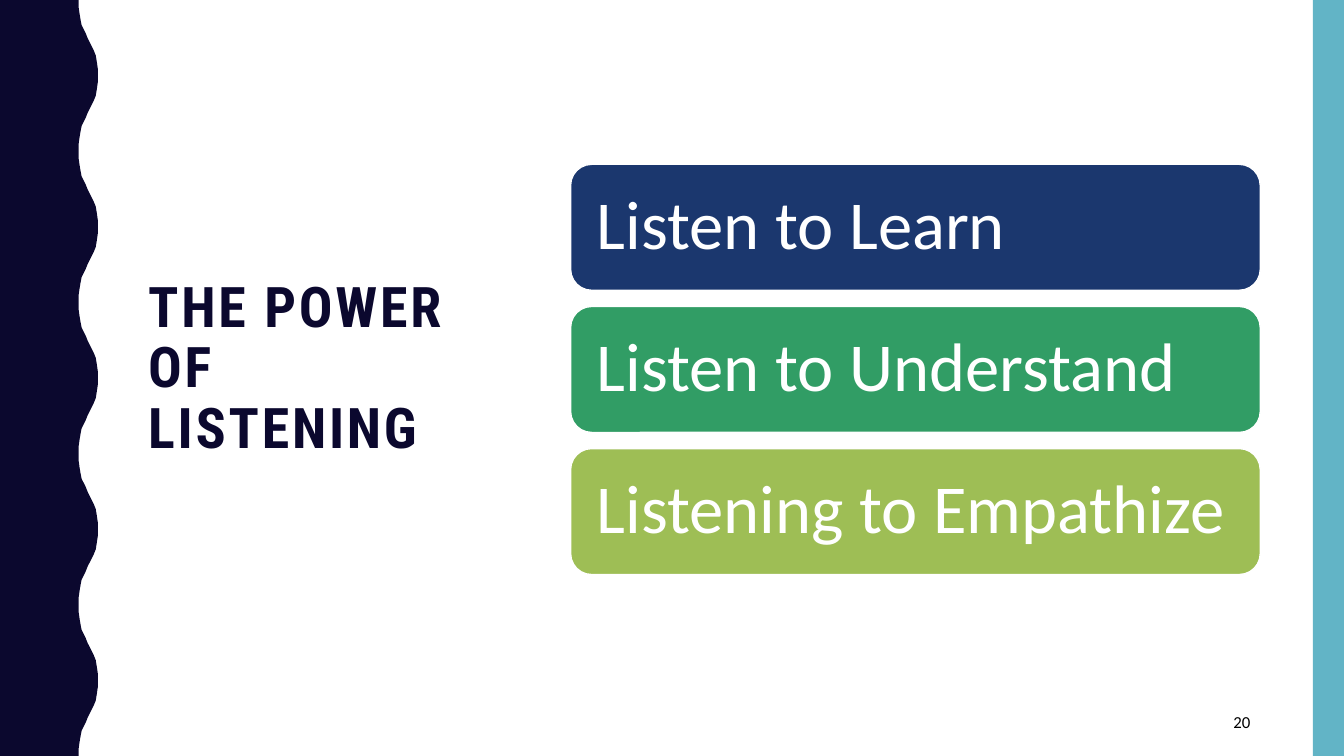
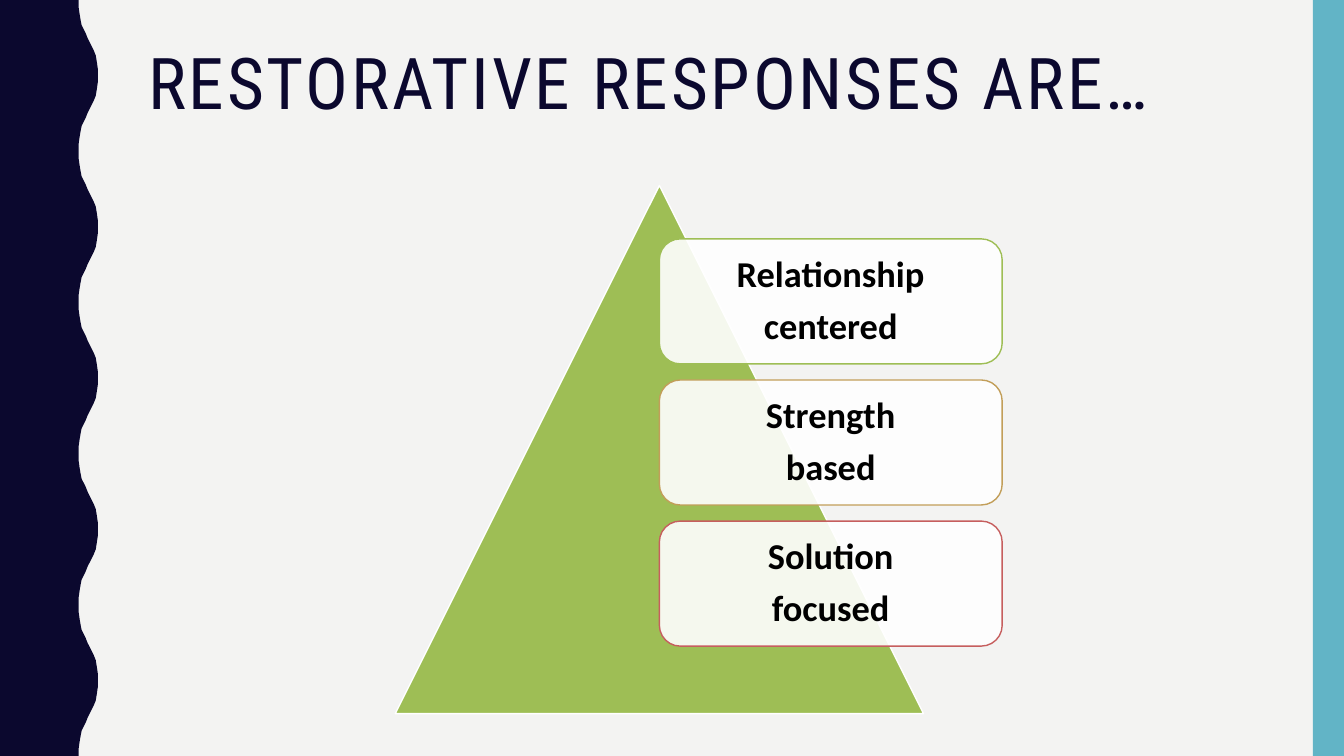
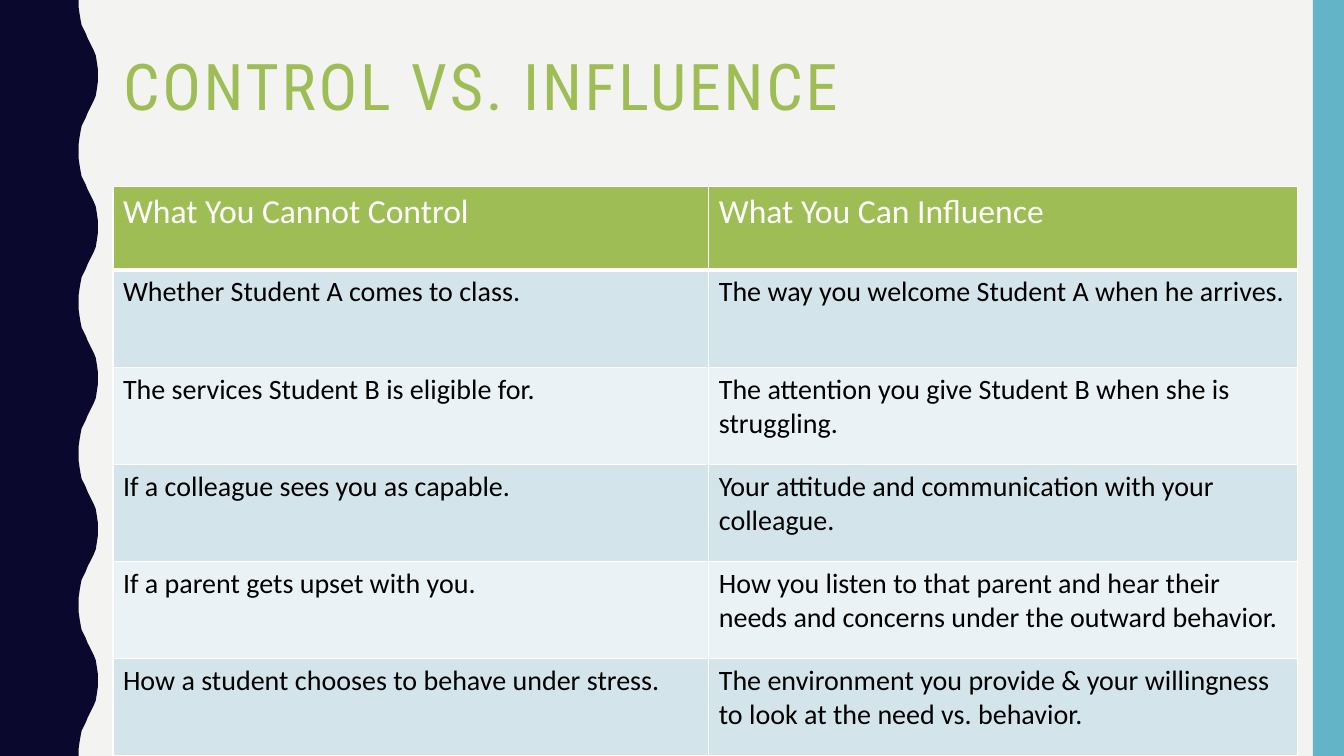
"""Build three slides on listening, restorative responses and influence."""
from dataclasses import dataclass
from typing import Any

from lxml.etree import SubElement
from pptx import Presentation
from pptx.dml.color import RGBColor
from pptx.enum.shapes import MSO_SHAPE
from pptx.enum.text import MSO_ANCHOR, MSO_AUTO_SIZE, PP_ALIGN
from pptx.oxml.ns import qn
from pptx.util import Inches, Pt


@dataclass(frozen=True)
class Theme:
    """Colours, fonts and type sizes of the deck."""
    navy: str = "0B082E"
    sky: str = "62B4C6"
    blue: str = "1B376E"
    green: str = "319D65"
    lime: str = "9EBE55"
    sand: str = "C29E59"
    coral: str = "C65E5E"
    white: str = "FFFFFF"
    paper: str = "F3F3F2"
    black: str = "000000"
    row_dark: str = "D3E5EA"
    row_light: str = "EAF2F5"
    heading_font: str = "Roboto Condensed"
    body_font: str = "Calibri"
    title_narrow: int = 40
    title_large: int = 51
    title_medium: int = 46
    listen: int = 49
    response: int = 26
    table_head: int = 24
    table_body: int = 20
    page_number: int = 12


@dataclass(frozen=True)
class Box:
    """A place on the slide in inches."""
    left: float
    top: float
    width: float
    height: float

    def emu(self) -> tuple[int, int, int, int]:
        """Return the place as lengths."""
        return (Inches(self.left), Inches(self.top),
                Inches(self.width), Inches(self.height))


@dataclass(frozen=True)
class TextStyle:
    """How the text of one element looks."""
    size: int
    color: str
    bold: bool = False
    font: str = "Calibri"
    align: PP_ALIGN = PP_ALIGN.LEFT
    line_spacing: float = 1.0
    space_after: float = 0
    tracking: int = 0


@dataclass(frozen=True)
class Card:
    """A rounded card with its lines of text."""
    lines: tuple[str, ...]
    fill: str
    outline: str


THEME = Theme()
SLIDE = Box(0, 0, 13.33, 7.5)
SIDE_BAND = Box(13.02, 0, 0.31, 7.5)
CARD_GAP = 0.16
WAVE_RISE = (
    (0.78, 0), (0.78, 0.07), (0.79, 0.14), (0.8, 0.2), (0.81, 0.25),
    (0.83, 0.29), (0.85, 0.33), (0.87, 0.38), (0.89, 0.42), (0.91, 0.46),
    (0.93, 0.5), (0.95, 0.55), (0.96, 0.61), (0.97, 0.68), (0.97, 0.75),
)
HALF_WAVE = 0.75
LISTEN_CARDS = (
    Card(("Listen to Learn",), THEME.blue, THEME.white),
    Card(("Listen to Understand",), THEME.green, THEME.white),
    Card(("Listening to Empathize",), THEME.lime, THEME.white),
)
RESPONSE_CARDS = (
    Card(("Relationship", "centered"), THEME.white, THEME.lime),
    Card(("Strength", "based"), THEME.white, THEME.sand),
    Card(("Solution", "focused"), THEME.white, THEME.coral),
)
INFLUENCE_ROWS = (
    ("What You Cannot Control", "What You Can Influence"),
    ("Whether Student A comes to class.",
     "The way you welcome Student A when he arrives."),
    ("The services Student B is eligible for.",
     "The attention you give Student B when she is struggling."),
    ("If a colleague sees you as capable.",
     "Your attitude and communication with your colleague."),
    ("If a parent gets upset with you.",
     "How you listen to that parent and hear their needs and concerns "
     "under the outward behavior."),
    ("How a student chooses to behave under stress.",
     "The environment you provide & your willingness to look at the need "
     "vs. behavior."),
)


def rgb(color: str) -> RGBColor:
    """Turn a hex string into a colour."""
    return RGBColor.from_string(color)


def apply(target: Any, values: dict[str, Any]) -> None:
    """Set each value as an attribute of the target."""
    for key, value in values.items():
        setattr(target, key, value)


def write(frame: Any, lines: tuple[str, ...], style: TextStyle) -> None:
    """Fill a text frame with one paragraph a line."""
    for index, line in enumerate(lines):
        paragraph = frame.add_paragraph() if index else frame.paragraphs[0]
        apply(paragraph, {"alignment": style.align,
                          "line_spacing": style.line_spacing,
                          "space_before": Pt(0),
                          "space_after": Pt(style.space_after)})
        run = paragraph.add_run()
        run.text = line
        apply(run.font, {"name": style.font, "size": Pt(style.size),
                         "bold": style.bold})
        run.font.color.rgb = rgb(style.color)
        if style.tracking:
            run.font._element.set("spc", str(style.tracking * 100))


def paint(shape: Any, fill: str, outline: str | None = None) -> None:
    """Give a shape a plain fill, an optional outline and no shadow."""
    shape.shadow.inherit = False
    shape.fill.solid()
    shape.fill.fore_color.rgb = rgb(fill)
    if outline:
        shape.line.color.rgb = rgb(outline)
        shape.line.width = Pt(1)
    else:
        shape.line.fill.background()


def set_opacity(shape: Any, percent: int) -> None:
    """Make the solid fill of a shape partly transparent."""
    color = shape._element.spPr.find(qn("a:solidFill"))[0]
    SubElement(color, qn("a:alpha")).set("val", str(percent * 1000))


def add_wave(slide: Any) -> None:
    """Draw the wavy band on the left edge."""
    edge = []
    for half in range(round(SLIDE.height / HALF_WAVE)):
        start = half * HALF_WAVE
        if half % 2:
            edge += [(x, start + HALF_WAVE - y) for x, y in reversed(WAVE_RISE)]
        else:
            edge += [(x, start + y) for x, y in WAVE_RISE]
    points = [(Inches(x), Inches(y)) for x, y in edge]
    builder = slide.shapes.build_freeform(0, 0, scale=1.0)
    builder.add_line_segments(points + [(0, Inches(SLIDE.height))], close=True)
    paint(builder.convert_to_shape(), THEME.navy)


def add_slide(deck: Any, background: str, title: str, place: Box,
              style: TextStyle, anchor: MSO_ANCHOR = MSO_ANCHOR.TOP,
              margin_right: float = 0.1) -> Any:
    """Add a slide with background, edge bands and title."""
    slide = deck.slides.add_slide(deck.slide_layouts[5])
    slide.background.fill.solid()
    slide.background.fill.fore_color.rgb = rgb(background)
    add_wave(slide)
    side = slide.shapes.add_shape(MSO_SHAPE.RECTANGLE, *SIDE_BAND.emu())
    paint(side, THEME.sky)
    heading = slide.shapes.title
    apply(heading, dict(zip(("left", "top", "width", "height"), place.emu())))
    apply(heading.text_frame, {"auto_size": MSO_AUTO_SIZE.NONE,
                               "word_wrap": True, "vertical_anchor": anchor,
                               "margin_right": Inches(margin_right)})
    write(heading.text_frame, (title,), style)
    return slide


def title_style(size: int, color: str, bold: bool = False) -> TextStyle:
    """Return the shared title style in one size and colour."""
    return TextStyle(size, color, bold, THEME.heading_font,
                     line_spacing=0.9, tracking=2)


def add_cards(slide: Any, cards: tuple[Card, ...], first: Box,
              style: TextStyle, inset: float, opacity: int = 100) -> None:
    """Stack cards downwards at equal gaps."""
    for index, card in enumerate(cards):
        top = first.top + index * (first.height + CARD_GAP)
        place = Box(first.left, top, first.width, first.height)
        panel = slide.shapes.add_shape(MSO_SHAPE.ROUNDED_RECTANGLE, *place.emu())
        paint(panel, card.fill, card.outline)
        if opacity < 100:
            set_opacity(panel, opacity)
        sides = ("left", "top", "right", "bottom")
        apply(panel.text_frame, {f"margin_{side}": Inches(inset) for side in sides})
        apply(panel.text_frame, {"word_wrap": True,
                                 "vertical_anchor": MSO_ANCHOR.MIDDLE})
        write(panel.text_frame, card.lines, style)


def add_page_number(slide: Any, number: str) -> None:
    """Write the page number at the bottom right."""
    frame = slide.shapes.add_textbox(*Box(9.42, 6.97, 3.08, 0.38).emu()).text_frame
    apply(frame, {"word_wrap": True, "vertical_anchor": MSO_ANCHOR.MIDDLE})
    write(frame, (number,), TextStyle(THEME.page_number, THEME.black,
                                      align=PP_ALIGN.RIGHT))


def set_borders(cell: Any, bottom: int) -> None:
    """Draw white borders round a table cell."""
    properties = cell._tc.get_or_add_tcPr()
    widths = {"lnL": 1, "lnR": 1, "lnT": 1, "lnB": bottom}
    for position, (tag, width) in enumerate(widths.items()):
        border = properties.makeelement(qn(f"a:{tag}"), {"w": str(Pt(width))})
        fill = SubElement(border, qn("a:solidFill"))
        SubElement(fill, qn("a:srgbClr")).set("val", THEME.white)
        properties.insert(position, border)


def add_influence_table(slide: Any) -> None:
    """Draw the two-column table with a header and striped rows."""
    place = Box(1.12, 1.85, 11.75, 5.65)
    head_height = 0.83
    body_height = (place.height - head_height) / (len(INFLUENCE_ROWS) - 1)
    table = slide.shapes.add_table(len(INFLUENCE_ROWS), 2, *place.emu()).table
    for column, width in zip(table.columns, (5.91, 5.84)):
        column.width = Inches(width)
    head = TextStyle(THEME.table_head, THEME.white)
    body = TextStyle(THEME.table_body, THEME.black)
    for index, texts in enumerate(INFLUENCE_ROWS):
        table.rows[index].height = Inches(body_height if index else head_height)
        stripe = THEME.row_dark if index % 2 else THEME.row_light
        for column, text in enumerate(texts):
            cell = table.cell(index, column)
            cell.fill.solid()
            cell.fill.fore_color.rgb = rgb(stripe if index else THEME.lime)
            set_borders(cell, bottom=1 if index else 3)
            write(cell.text_frame, (text,), body if index else head)


def build_listening(deck: Any) -> None:
    """Build the slide on the power of listening."""
    slide = add_slide(deck, THEME.white, "THE POWER OF LISTENING",
                      Box(1.37, 0.71, 3.7, 5.91),
                      title_style(THEME.title_narrow, THEME.navy, bold=True),
                      MSO_ANCHOR.MIDDLE, margin_right=0.35)
    add_page_number(slide, "20")
    add_cards(slide, LISTEN_CARDS, Box(5.66, 1.63, 6.84, 1.25),
              TextStyle(THEME.listen, THEME.white, line_spacing=0.9), inset=0.2)


def build_responses(deck: Any) -> None:
    """Build the slide on restorative responses."""
    slide = add_slide(deck, THEME.paper, "RESTORATIVE RESPONSES ARE…",
                      Box(1.37, 0.42, 11.13, 1.21),
                      title_style(THEME.title_large, THEME.navy))
    pyramid = slide.shapes.add_shape(MSO_SHAPE.ISOSCELES_TRIANGLE,
                                     *Box(3.92, 1.84, 5.24, 5.24).emu())
    paint(pyramid, THEME.lime, THEME.white)
    style = TextStyle(THEME.response, THEME.black, bold=True,
                      align=PP_ALIGN.CENTER, line_spacing=0.9, space_after=9)
    add_cards(slide, RESPONSE_CARDS, Box(6.54, 2.37, 3.4, 1.24), style,
              inset=0.11, opacity=90)


def build_influence(deck: Any) -> None:
    """Build the slide on control and influence."""
    slide = add_slide(deck, THEME.paper, "CONTROL VS. INFLUENCE",
                      Box(1.12, 0.49, 11.32, 1.06),
                      title_style(THEME.title_medium, THEME.lime))
    add_influence_table(slide)


def main() -> None:
    """Build and save the deck."""
    deck = Presentation()
    apply(deck, {"slide_width": Inches(SLIDE.width),
                 "slide_height": Inches(SLIDE.height)})
    for build in (build_listening, build_responses, build_influence):
        build(deck)
    deck.save("out.pptx")


if __name__ == "__main__":
    main()
